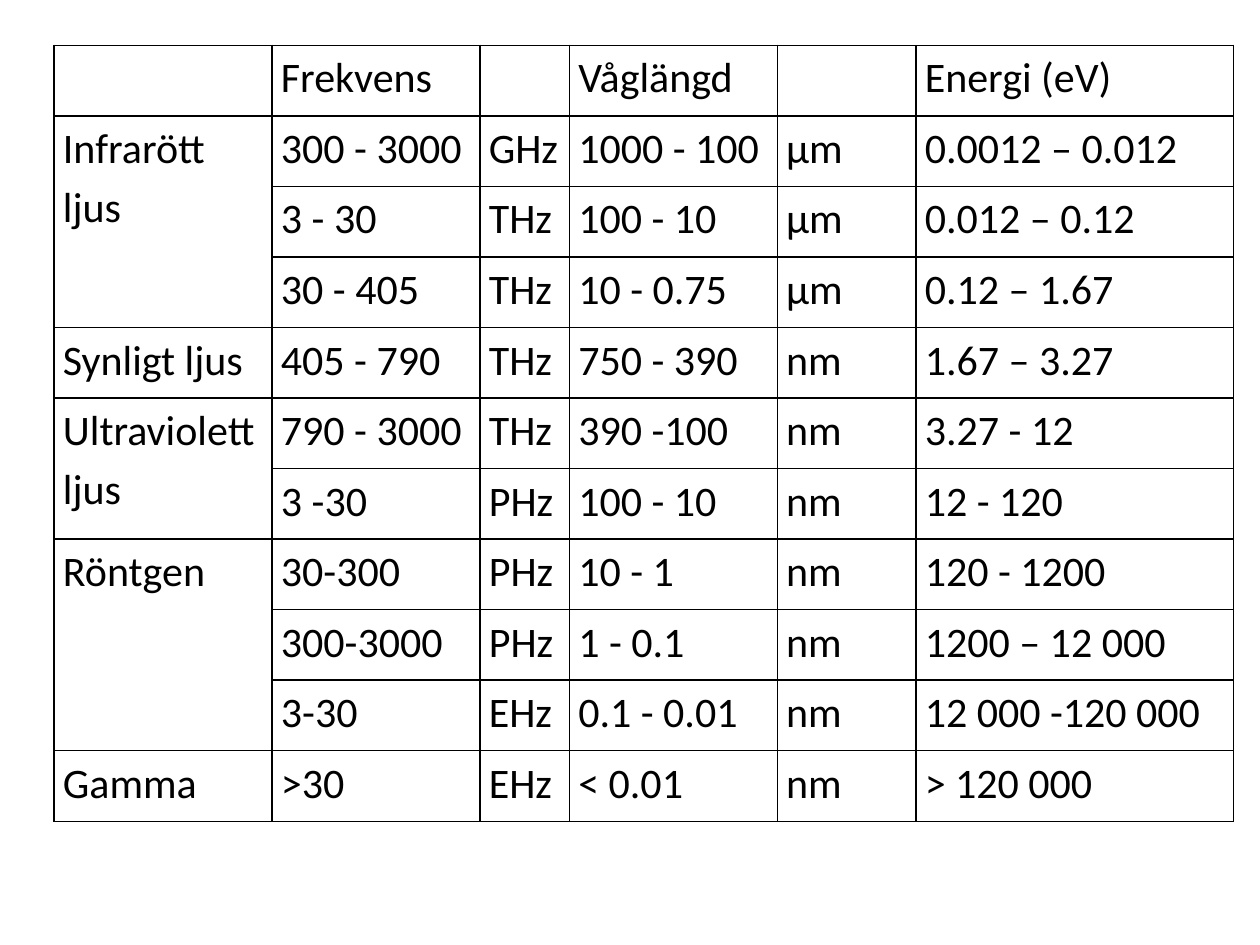
from lxml.etree import SubElement
from pptx import Presentation
from pptx.dml.color import RGBColor
from pptx.oxml.ns import qn
from pptx.util import Inches, Pt

BLACK = RGBColor(0x00, 0x00, 0x00)
COLUMN_WIDTHS = [1.73, 1.65, 0.71, 1.65, 1.1, 2.52]
ROW_HEIGHT = 0.56
HEADINGS = ["", "Frekvens", "", "Våglängd", "", "Energi (eV)"]
RADIATION = {
    "Infrarött ljus": [
        ["300 - 3000", "GHz", "1000 - 100", "μm", "0.0012 – 0.012"],
        ["3 - 30", "THz", "100 - 10", "μm", "0.012 – 0.12"],
        ["30 - 405", "THz", "10 - 0.75", "μm", "0.12 – 1.67"],
    ],
    "Synligt ljus": [["405 - 790", "THz", "750 - 390", "nm", "1.67 – 3.27"]],
    "Ultraviolett ljus": [
        ["790 - 3000", "THz", "390 -100", "nm", "3.27 - 12"],
        ["3 -30", "PHz", "100 - 10", "nm", "12 - 120"],
    ],
    "Röntgen": [
        ["30-300", "PHz", "10 - 1", "nm", "120 - 1200"],
        ["300-3000", "PHz", "1 - 0.1", "nm", "1200 – 12 000"],
        ["3-30", "EHz", "0.1 - 0.01", "nm", "12 000 -120 000"],
    ],
    "Gamma": [[">30", "EHz", "< 0.01", "nm", "> 120 000"]],
}


def write_text(cell, text, size=24, font="Calibri", color=BLACK, spacing=1.15):
    """Write one formatted paragraph in a cell."""
    para = cell.text_frame.paragraphs[0]
    para.line_spacing = spacing
    span = para.add_run()
    span.text = text
    span.font.size = Pt(size)
    span.font.name = font
    span.font.color.rgb = color


def format_cell(cell, color=BLACK, width=1):
    """Give a cell its margins, borders on all sides and no fill."""
    cell.margin_left = cell.margin_right = Inches(0.07)
    cell.margin_top = cell.margin_bottom = 0
    properties = cell._tc.get_or_add_tcPr()
    for side in ("a:lnL", "a:lnR", "a:lnT", "a:lnB"):
        line = SubElement(properties, qn(side), w=str(Pt(width)))
        fill = SubElement(line, qn("a:solidFill"))
        SubElement(fill, qn("a:srgbClr"), val=str(color))
    cell.fill.background()


def add_grid(page, left, top, row_count):
    """Add an empty bordered table and return it."""
    frame = page.shapes.add_table(
        row_count, len(COLUMN_WIDTHS), Inches(left), Inches(top),
        Inches(sum(COLUMN_WIDTHS)), Inches(ROW_HEIGHT * row_count))
    table = frame.table
    table.first_row = table.horz_banding = False
    for column, width in zip(table.columns, COLUMN_WIDTHS):
        column.width = Inches(width)
    for row in table.rows:
        row.height = Inches(ROW_HEIGHT)
    for cell in table.iter_cells():
        format_cell(cell)
    return table


def fill_row(table, row, texts, first_column=0):
    """Write the texts that are not empty along one row."""
    for column, text in enumerate(texts, first_column):
        if text:
            write_text(table.cell(row, column), text)


def main():
    """Build the table of radiation types."""
    deck = Presentation()
    deck.slide_width, deck.slide_height = Inches(10), Inches(7.5)
    page = deck.slides.add_slide(deck.slide_layouts[6])
    table = add_grid(page, 0.43, 0.36, 1 + sum(map(len, RADIATION.values())))
    fill_row(table, 0, HEADINGS)
    row = 1
    for name, bands in RADIATION.items():
        write_text(table.cell(row, 0), name)
        if len(bands) > 1:
            table.cell(row, 0).merge(table.cell(row + len(bands) - 1, 0))
        for band in bands:
            fill_row(table, row, band, first_column=1)
            row += 1
    deck.save("out.pptx")


if __name__ == "__main__":
    main()
